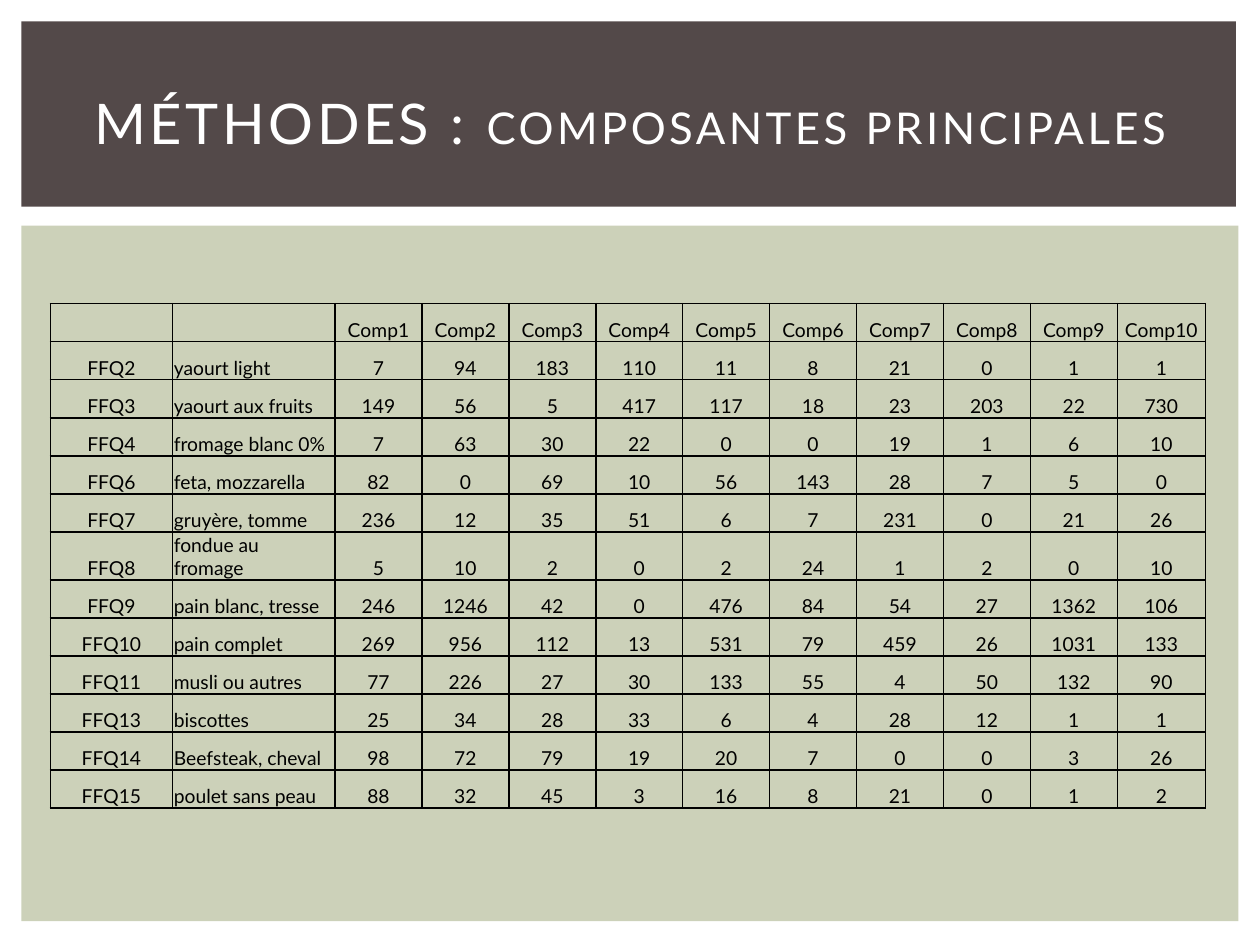
from lxml import etree
from pptx import Presentation
from pptx import util as u
from pptx.dml.color import RGBColor
from pptx.enum import shapes, text
from pptx.oxml import ns

WHITE = RGBColor(0xFF, 0xFF, 0xFF)
BLACK = RGBColor(0x00, 0x00, 0x00)
BROWN = RGBColor(0x53, 0x49, 0x49)
SAGE = RGBColor(0xCC, 0xD1, 0xB9)
FONT = "Lato"
SIZE = 11
COMPS = 10
COLS = [0.97, 1.29] + [0.69] * (COMPS - 1) + [0.7]
ROW = 0.302

FOODS = [
    ("FFQ2", "yaourt light", "7 94 183 110 11 8 21 0 1 1"),
    ("FFQ3", "yaourt aux fruits", "149 56 5 417 117 18 23 203 22 730"),
    ("FFQ4", "fromage blanc 0%", "7 63 30 22 0 0 19 1 6 10"),
    ("FFQ6", "feta, mozzarella", "82 0 69 10 56 143 28 7 5 0"),
    ("FFQ7", "gruyère, tomme", "236 12 35 51 6 7 231 0 21 26"),
    ("FFQ8", "fondue au fromage", "5 10 2 0 2 24 1 2 0 10"),
    ("FFQ9", "pain blanc, tresse", "246 1246 42 0 476 84 54 27 1362 106"),
    ("FFQ10", "pain complet", "269 956 112 13 531 79 459 26 1031 133"),
    ("FFQ11", "musli ou autres", "77 226 27 30 133 55 4 50 132 90"),
    ("FFQ13", "biscottes", "25 34 28 33 6 4 28 12 1 1"),
    ("FFQ14", "Beefsteak, cheval", "98 72 79 19 20 7 0 0 3 26"),
    ("FFQ15", "poulet sans peau", "88 32 45 3 16 8 21 0 1 2"),
]


def add_panel(slide, box, color):
    panel = slide.shapes.add_shape(
        shapes.MSO_SHAPE.RECTANGLE, *[u.Inches(n) for n in box])
    panel.shadow.inherit = False
    panel.fill.solid()
    panel.fill.fore_color.rgb = color
    panel.line.fill.background()


def add_run(para, words, size, color):
    run = para.add_run()
    run.text = words
    run.font.name = FONT
    run.font.size = u.Pt(size)
    run.font.color.rgb = color
    return run


def set_title(slide, box, parts):
    title = slide.shapes.title
    title.left, title.top, title.width, title.height = [
        u.Inches(n) for n in box]
    frame = title.text_frame
    frame.word_wrap = True
    frame.auto_size = text.MSO_AUTO_SIZE.NONE
    frame.vertical_anchor = text.MSO_ANCHOR.MIDDLE
    para = frame.paragraphs[0]
    para.alignment = text.PP_ALIGN.CENTER
    for words, size in parts:
        run = add_run(para, words, size, WHITE)
        run.font._element.set("spc", "200")
    slide.shapes._spTree.append(title._element)


def add_edges(cell):
    props = cell._tc.get_or_add_tcPr()
    for side in ("lnL", "lnR", "lnT", "lnB"):
        line = etree.SubElement(props, ns.qn("a:" + side), w=str(u.Pt(1)))
        fill = etree.SubElement(line, ns.qn("a:solidFill"))
        etree.SubElement(fill, ns.qn("a:srgbClr"), val=str(BLACK))


def fill_cell(cell, words, align):
    cell.margin_left = cell.margin_right = cell.margin_top = u.Inches(0.01)
    cell.margin_bottom = 0
    cell.vertical_anchor = text.MSO_ANCHOR.BOTTOM
    add_edges(cell)
    cell.fill.background()
    para = cell.text_frame.paragraphs[0]
    para.alignment = align
    if words:
        add_run(para, words, SIZE, BLACK)
    else:
        etree.SubElement(para._p, ns.qn("a:endParaRPr"), sz=str(SIZE * 100))


def add_grid(slide, left, top, rows):
    frame = slide.shapes.add_table(
        len(rows), len(COLS), u.Inches(left), u.Inches(top),
        u.Inches(sum(COLS)), u.Inches(ROW * len(rows)))
    table = frame.table
    table.first_row = table.horz_banding = False
    for col, width in zip(table.columns, COLS):
        col.width = u.Inches(width)
    for line, row in zip(table.rows, rows):
        line.height = u.Inches(ROW)
        for i, (cell, words) in enumerate(zip(line.cells, row)):
            side = text.PP_ALIGN.LEFT if i == 1 else text.PP_ALIGN.CENTER
            fill_cell(cell, words, side)


def main():
    deck = Presentation()
    deck.slide_width, deck.slide_height = u.Inches(10), u.Inches(7.5)
    slide = deck.slides.add_slide(deck.slide_layouts[5])
    add_panel(slide, (0.17, 1.79, 9.66, 5.52), SAGE)
    add_panel(slide, (0.17, 0.17, 9.64, 1.47), BROWN)
    set_title(slide, (0.42, 0.39, 9.17, 1.15),
              [("MÉTHODES : ", 32), ("COMPOSANTES PRINCIPALES", 25)])
    head = ["", ""] + [f"Comp{n + 1}" for n in range(COMPS)]
    rows = [[code, food, *nums.split()] for code, food, nums in FOODS]
    add_grid(slide, 0.4, 2.41, [head] + rows)
    deck.save("out.pptx")


if __name__ == "__main__":
    main()
